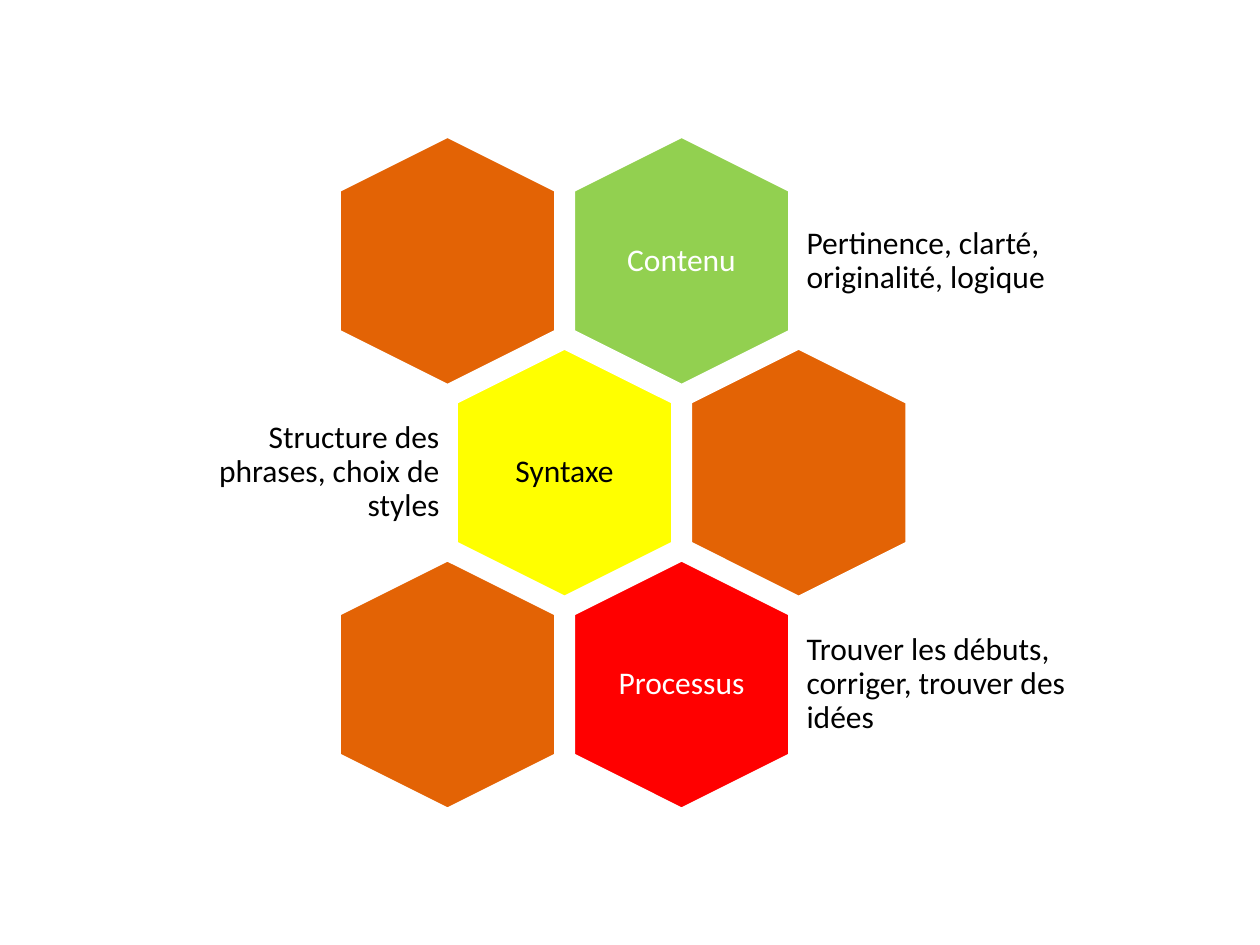
from dataclasses import dataclass

from pptx import Presentation
from pptx.dml.color import RGBColor
from pptx.enum.shapes import MSO_SHAPE
from pptx.enum.text import MSO_ANCHOR, PP_ALIGN
from pptx.util import Cm, Pt

HEXAGON = MSO_SHAPE.HEXAGON
MIDDLE = MSO_ANCHOR.MIDDLE
LEFT, CENTER, RIGHT = PP_ALIGN.LEFT, PP_ALIGN.CENTER, PP_ALIGN.RIGHT


@dataclass(frozen=True)
class Theme:
    font: str = "Calibri"
    text_size: int = 18
    outline_width: int = 2
    white: str = "FFFFFF"
    black: str = "000000"
    orange: str = "E36305"
    green: str = "92D050"
    yellow: str = "FFFF00"
    red: str = "FF0000"


THEME = Theme()

HEX_LENGTH, HEX_BREADTH = 5.03, 4.37
COLUMN_PITCH, ROW_PITCH = 4.72, 4.27
FIRST_X, FIRST_Y = 9.02, 5.26
LABEL_WIDTH, LABEL_HEIGHT = 3.02, 3.45
DETAIL_HEIGHT = 3.02
RIGHT_DETAIL_WIDTH, LEFT_DETAIL_WIDTH = 5.61, 5.44
DETAIL_OFFSET = 2.34
INSET = 0.18

ROWS = [
    ("Contenu", THEME.green, THEME.white,
     "Pertinence, clarté, originalité, logique"),
    ("Syntaxe", THEME.yellow, THEME.black,
     "Structure des phrases, choix de styles"),
    ("Processus", THEME.red, THEME.white,
     "Trouver les débuts, corriger, trouver des idées"),
]


def add_hexagon(slide, center_x, center_y, color):
    hexagon = slide.shapes.add_shape(
        HEXAGON, Cm(center_x - HEX_LENGTH / 2), Cm(center_y - HEX_BREADTH / 2),
        Cm(HEX_LENGTH), Cm(HEX_BREADTH))
    hexagon.rotation = 90
    hexagon.adjustments[0] = 0.25
    hexagon.shadow.inherit = False
    hexagon.fill.solid()
    hexagon.fill.fore_color.rgb = RGBColor.from_string(color)
    hexagon.line.color.rgb = RGBColor.from_string(THEME.white)
    hexagon.line.width = Pt(THEME.outline_width)


def add_text(slide, text, left, center_y, width, height, align, color):
    box = slide.shapes.add_textbox(
        Cm(left), Cm(center_y - height / 2), Cm(width), Cm(height))
    frame = box.text_frame
    frame.word_wrap = True
    frame.vertical_anchor = MIDDLE
    frame.margin_left = frame.margin_right = Cm(INSET)
    frame.margin_top = frame.margin_bottom = Cm(INSET)
    frame.text = text
    paragraph = frame.paragraphs[0]
    paragraph.alignment = align
    paragraph.line_spacing = 0.9
    font = paragraph.runs[0].font
    font.name = THEME.font
    font.size = Pt(THEME.text_size)
    font.color.rgb = RGBColor.from_string(color)


def add_row(slide, index, label, fill, label_color, detail):
    center_y = FIRST_Y + index * ROW_PITCH
    shifted = index % 2 == 1
    left_x = FIRST_X + (COLUMN_PITCH / 2 if shifted else 0)
    right_x = left_x + COLUMN_PITCH
    if shifted:
        topic_x, plain_x = left_x, right_x
        detail_width, detail_align = LEFT_DETAIL_WIDTH, RIGHT
        detail_left = topic_x - DETAIL_OFFSET - detail_width
    else:
        topic_x, plain_x = right_x, left_x
        detail_width, detail_align = RIGHT_DETAIL_WIDTH, LEFT
        detail_left = topic_x + DETAIL_OFFSET

    add_hexagon(slide, topic_x, center_y, fill)
    add_text(slide, label, topic_x - LABEL_WIDTH / 2, center_y,
             LABEL_WIDTH, LABEL_HEIGHT, CENTER, label_color)
    add_text(slide, detail, detail_left, center_y,
             detail_width, DETAIL_HEIGHT, detail_align, THEME.black)
    add_hexagon(slide, plain_x, center_y, THEME.orange)


def main():
    presentation = Presentation()
    presentation.slide_width = Cm(25.4)
    presentation.slide_height = Cm(19.05)
    slide = presentation.slides.add_slide(presentation.slide_layouts[6])
    for index, row in enumerate(ROWS):
        add_row(slide, index, *row)
    presentation.save("out.pptx")


if __name__ == "__main__":
    main()
